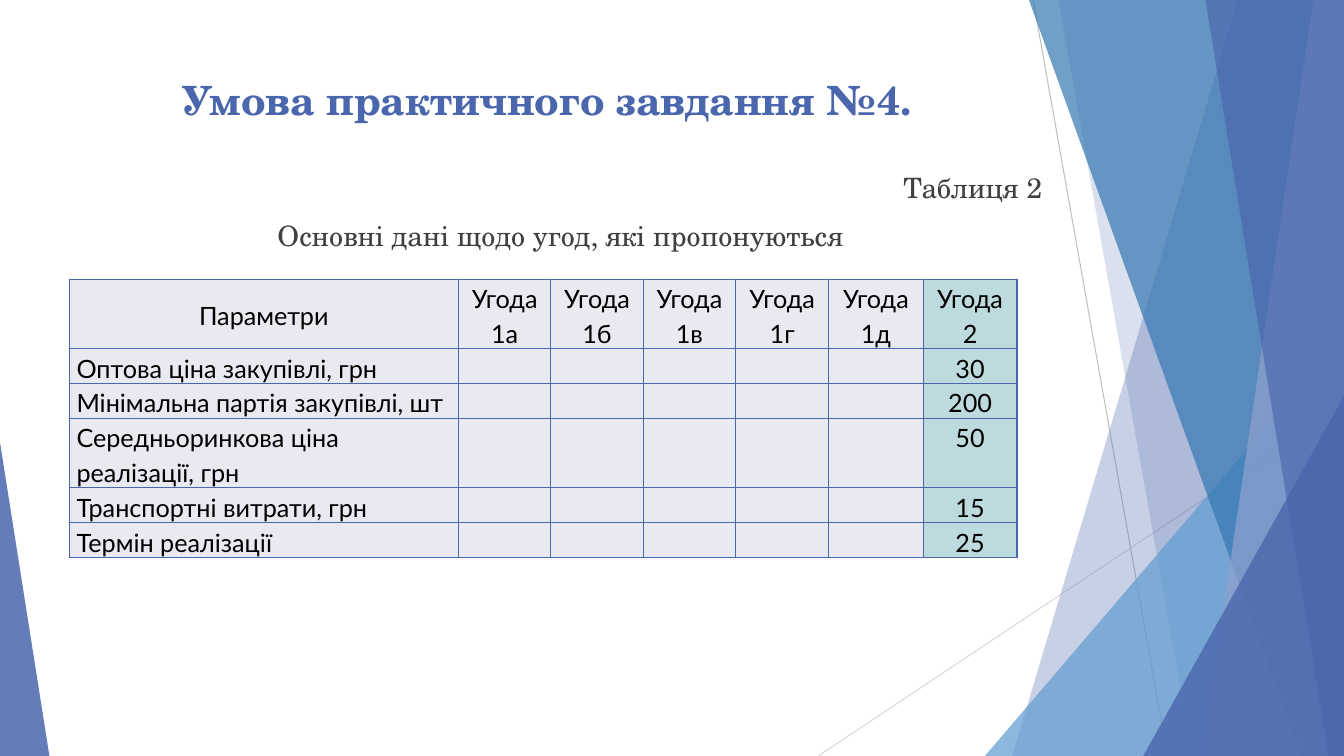
from dataclasses import dataclass

from lxml.etree import SubElement
from pptx import Presentation
from pptx.dml.color import RGBColor
from pptx.enum.shapes import MSO_CONNECTOR, MSO_SHAPE
from pptx.enum.text import MSO_ANCHOR as Anchor, PP_ALIGN as Align
from pptx.oxml import parse_xml
from pptx.oxml.ns import nsdecls, qn
from pptx.util import Pt


@dataclass(frozen=True)
class Theme:
    accent: str = "4A66AC"
    blue: str = "3477B2"
    sky: str = "629DD1"
    pale: str = "90A2CF"
    text: str = "404040"
    table_text: str = "000000"
    cell: str = "E9EAF1"
    highlight: str = "BDDADF"
    serif: str = "TeX Gyre Schola"
    sans: str = "Lato"
    title_size: float = 28.8
    caption_size: float = 20
    table_size: float = 18


THEME = Theme()
WIDTH, HEIGHT = 960, 540

TITLE = "Умова практичного завдання №4."
CAPTIONS = [
    ("Таблиця 2", Align.RIGHT, 0),
    ("Основні дані щодо угод, які пропонуються", Align.CENTER, 10),
]
HEADERS = ["Параметри", "Угода 1а", "Угода 1б", "Угода 1в", "Угода 1г", "Угода 1д", "Угода 2"]
# Parameter, value for the last deal, number of text lines
PARAMETERS = [
    ("Оптова ціна закупівлі, грн", "30", 1),
    ("Мінімальна партія закупівлі, шт", "200", 1),
    ("Середньоринкова ціна реалізації, грн", "50", 2),
    ("Транспортні витрати, грн", "15", 1),
    ("Термін реалізації", "25", 1),
]
HEADER_LINES = 2
LINE_HEIGHT = 24.84
COLUMN_WIDTHS = [278, 66, 66, 66, 66.5, 67.5, 67]
TABLE_LEFT, TABLE_TOP = 49.5, 199.4

# Start, end, colour
THIN_LINES = [
    ((738, 0), (834, HEIGHT), "BFBFBF"),
    ((WIDTH, 290), (584.5, HEIGHT), "D9D9D9"),
]
# Bands reach the right edge: x at the top, x at the bottom, colour, opacity
BACK_BANDS = [(884.2, 723, THEME.accent, 30), (756, 851.8, THEME.accent, 20)]
FRONT_BANDS = [
    (735, 929.5, THEME.blue, 70),
    (938.2, 858.2, THEME.pale, 70),
    (861, 949, THEME.accent, 65),
]
# Triangles stand on the bottom edge: left, top, width, apex, colour, opacity
SKY_TRIANGLE = (703.5, 240, 256.5, 1, THEME.sky, 72)
CORNER_TRIANGLES = [
    (816.6, 283, 143.4, 1, THEME.accent, 80),
    (0, 316, 35.3, 0, THEME.accent, 85),
]


def color(value):
    return RGBColor.from_string(value)


def assign(target, **values):
    for name, value in values.items():
        setattr(target, name, value)


def paint(shape, fill, opacity):
    shape.shadow.inherit = False
    shape.fill.solid()
    shape.fill.fore_color.rgb = color(fill)
    shape.line.fill.background()
    tint = shape.fill._xPr.find(qn("a:solidFill"))[0]
    SubElement(tint, qn("a:alpha"), val=str(opacity * 1000))


def add_thin_line(slide, start, end, stroke):
    line = slide.shapes.add_connector(MSO_CONNECTOR.STRAIGHT, *map(Pt, start + end))
    line.line.width = Pt(0.75)
    line.line.color.rgb = color(stroke)
    SubElement(line._element.spPr, qn("a:effectLst"))


def add_band(slide, top_x, bottom_x, fill, opacity):
    builder = slide.shapes.build_freeform(Pt(top_x), 0, scale=1.0)
    corners = [(WIDTH, 0), (WIDTH, HEIGHT), (bottom_x, HEIGHT)]
    builder.add_line_segments([(Pt(x), Pt(y)) for x, y in corners], close=True)
    paint(builder.convert_to_shape(), fill, opacity)


def add_triangle(slide, left, top, width, apex, fill, opacity):
    box = map(Pt, (left, top, width, HEIGHT - top))
    triangle = slide.shapes.add_shape(MSO_SHAPE.ISOSCELES_TRIANGLE, *box)
    triangle.adjustments[0] = apex
    paint(triangle, fill, opacity)


def add_decoration(slide):
    for line in THIN_LINES:
        add_thin_line(slide, *line)
    for band in BACK_BANDS:
        add_band(slide, *band)
    add_triangle(slide, *SKY_TRIANGLE)
    for band in FRONT_BANDS:
        add_band(slide, *band)
    for triangle in CORNER_TRIANGLES:
        add_triangle(slide, *triangle)


def write(paragraph, text, font, size, ink, align, bold=False):
    paragraph.alignment = align
    run = paragraph.add_run()
    run.text = text
    assign(run.font, name=font, size=Pt(size), bold=bold)
    run.font.color.rgb = color(ink)


def add_title(slide):
    title = slide.shapes.title
    assign(title, left=Pt(123), top=Pt(50.4), width=Pt(555), height=Pt(48))
    assign(title.text_frame, word_wrap=True, vertical_anchor=Anchor.TOP)
    write(title.text_frame.paragraphs[0], TITLE, THEME.serif, THEME.title_size,
          THEME.accent, Align.LEFT, bold=True)


def add_captions(slide):
    frame = slide.shapes.add_textbox(Pt(49.5), Pt(118.2), Pt(702), Pt(66)).text_frame
    frame.word_wrap = True
    for index, (text, align, space) in enumerate(CAPTIONS):
        paragraph = frame.add_paragraph() if index else frame.paragraphs[0]
        paragraph.space_before = Pt(space)
        write(paragraph, text, THEME.serif, THEME.caption_size, THEME.text, align)


def add_borders(cell):
    properties = cell._tc.get_or_add_tcPr()
    for index, side in enumerate("LRTB"):
        properties.insert(index, parse_xml(
            f'<a:ln{side} {nsdecls("a")} w="12700"><a:solidFill>'
            f'<a:srgbClr val="{THEME.accent}"/></a:solidFill></a:ln{side}>'))


def add_deal_table(slide):
    rows = [HEADERS]
    rows += [[name, *[""] * (len(HEADERS) - 2), value] for name, value, _ in PARAMETERS]
    line_counts = [HEADER_LINES] + [lines for _, _, lines in PARAMETERS]
    size = (sum(COLUMN_WIDTHS), sum(line_counts) * LINE_HEIGHT)
    frame = slide.shapes.add_table(len(rows), len(HEADERS),
                                   *map(Pt, (TABLE_LEFT, TABLE_TOP, *size)))
    table = frame.table
    assign(table, first_row=False, horz_banding=False)
    for column, width in zip(table.columns, COLUMN_WIDTHS):
        column.width = Pt(width)
    for row_index, (values, lines) in enumerate(zip(rows, line_counts)):
        table.rows[row_index].height = Pt(lines * LINE_HEIGHT)
        for column_index, text in enumerate(values):
            cell = table.cell(row_index, column_index)
            is_last = column_index == len(HEADERS) - 1
            assign(cell, margin_left=Pt(5.2), margin_right=Pt(5.2), margin_top=0,
                   margin_bottom=0,
                   vertical_anchor=Anchor.TOP if row_index else Anchor.MIDDLE)
            cell.fill.solid()
            cell.fill.fore_color.rgb = color(THEME.highlight if is_last else THEME.cell)
            add_borders(cell)
            if text:
                paragraph = cell.text_frame.paragraphs[0]
                paragraph.line_spacing = 1.15
                align = Align.LEFT if row_index and not column_index else Align.CENTER
                write(paragraph, text, THEME.sans, THEME.table_size,
                      THEME.table_text, align)


def main():
    presentation = Presentation()
    assign(presentation, slide_width=Pt(WIDTH), slide_height=Pt(HEIGHT))
    slide = presentation.slides.add_slide(presentation.slide_layouts[5])
    add_decoration(slide)
    add_title(slide)
    add_captions(slide)
    add_deal_table(slide)
    presentation.save("out.pptx")


if __name__ == "__main__":
    main()
